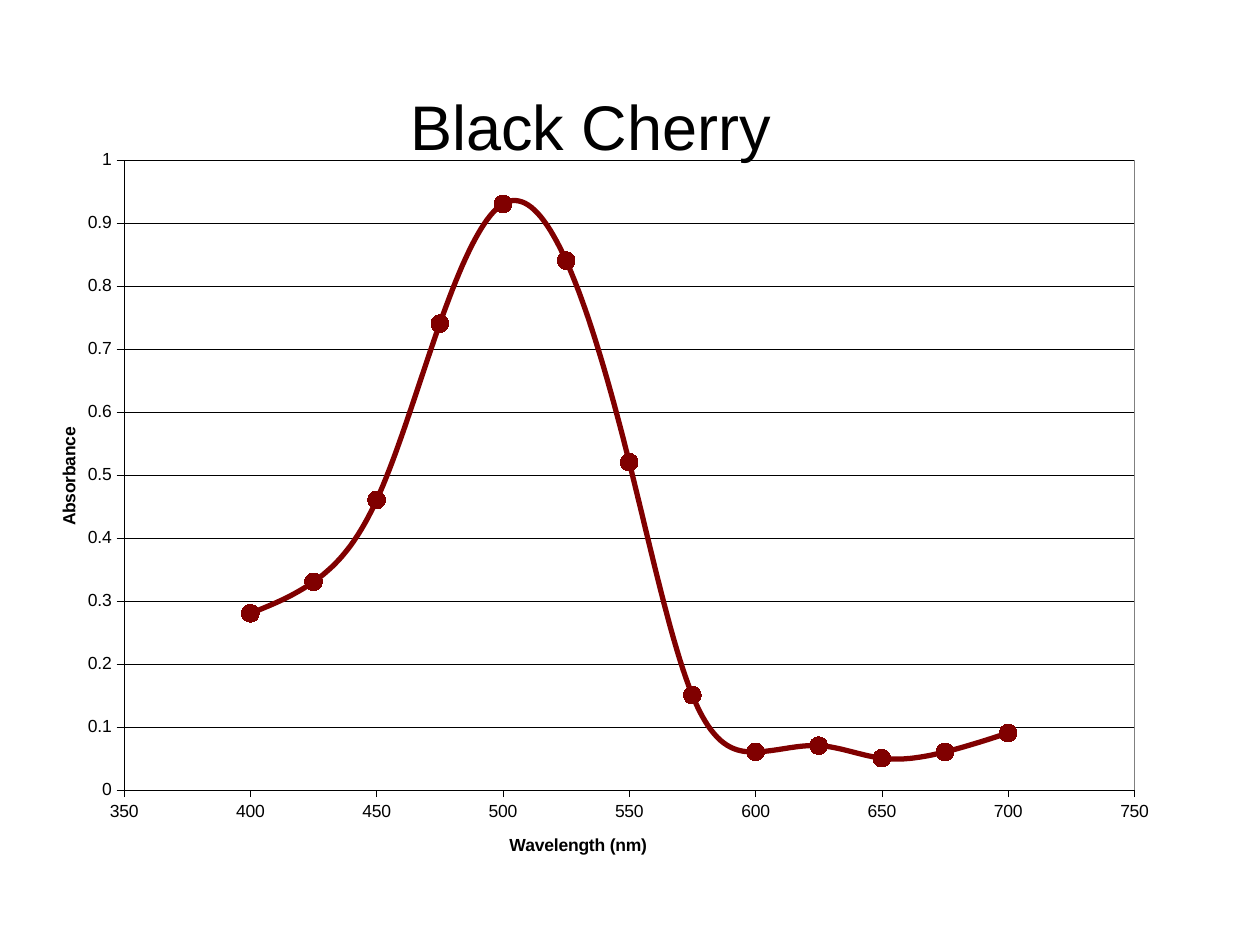
from dataclasses import dataclass

from pptx import Presentation
from pptx import util as u
from pptx.chart.data import XyChartData
from pptx.dml.color import RGBColor
from pptx.enum import chart as ch
from pptx.oxml import parse_xml
from pptx.oxml.ns import nsdecls, qn


@dataclass(frozen=True)
class Theme:
    font: str = "Arial"
    ink: RGBColor = RGBColor(0, 0, 0)
    cherry: RGBColor = RGBColor(0x80, 0, 0)
    frame: RGBColor = RGBColor(0x80, 0x80, 0x80)
    title: float = 36
    body: float = 10
    hair: float = 0.25
    curve: float = 3


def set_text(tf, value, font, size, color, bold=False):
    tf.text = value
    r = tf.paragraphs[0].runs[0]
    r.font.name, r.font.size, r.font.bold = font, u.Pt(size), bold
    r.font.color.rgb = color


def set_line(line, color, width):
    line.color.rgb = color
    line.width = u.Pt(width)


class Deck:
    """Holds the theme and the current slide, and adds chart elements to it."""

    def __init__(self, prs, theme):
        self.theme = theme
        self.s = prs.slides.add_slide(prs.slide_layouts[6])
        self.size = None

    def layout(self, el, *box):
        old = el.find(qn("c:layout"))
        if old is not None:
            el.remove(old)
        target = '<c:layoutTarget val="inner"/>' if len(box) == 4 else ""
        values = "".join(
            f'<c:{tag} val="{u.Pt(v) / full:.4f}"/>'
            for tag, v, full in zip("xywh", box, self.size * 2))
        el.insert(0 if el.find(qn("c:tx")) is None else 1, parse_xml(
            f'<c:layout {nsdecls("c")}><c:manualLayout>{target}<c:xMode val="edge"/>'
            f'<c:yMode val="edge"/>{values}</c:manualLayout></c:layout>'))

    def title(self, owner, value, x, y, size, bold=False, rot=0):
        t = self.theme
        tf = owner.text_frame
        set_text(tf, value, font=t.font, size=size, color=t.ink, bold=bold)
        tf._txBody.find(qn("a:bodyPr")).set("rot", str(rot * 60000))
        self.layout(owner._element, x, y)

    def axis(self, axis, low, high, step, grid):
        t = self.theme
        axis.minimum_scale, axis.maximum_scale, axis.major_unit = low, high, step
        axis.has_major_gridlines = grid
        axis.major_tick_mark = ch.XL_TICK_MARK.OUTSIDE
        axis.minor_tick_mark = ch.XL_TICK_MARK.NONE
        axis.tick_labels.number_format = "General"
        axis.tick_labels.number_format_is_linked = False
        set_line(axis.format.line, t.ink, t.hair)
        if grid:
            set_line(axis.major_gridlines.format.line, t.ink, t.hair)

    def scatter(self, name, points, left, top, width, height, plot):
        t = self.theme
        data = XyChartData()
        series = data.add_series(name)
        for x, y in points:
            series.add_data_point(x, y)
        self.size = (u.Pt(width), u.Pt(height))
        chart = self.s.shapes.add_chart(
            ch.XL_CHART_TYPE.XY_SCATTER_SMOOTH, u.Pt(left), u.Pt(top),
            *self.size, data).chart
        chart.has_legend = False
        chart.font.name, chart.font.size = t.font, u.Pt(t.body)
        chart.font.color.rgb = t.ink
        chart.plots[0].vary_by_categories = False
        ser = chart.plots[0].series[0]
        ser._element.find(qn("c:smooth")).set("val", "1")
        set_line(ser.format.line, t.cherry, t.curve)
        ser.marker.style = ch.XL_MARKER_STYLE.CIRCLE
        ser.marker.size = 10
        ser.marker.format.fill.solid()
        ser.marker.format.fill.fore_color.rgb = t.cherry
        set_line(ser.marker.format.line, t.cherry, t.hair)
        area = chart._chartSpace.chart.plotArea
        self.layout(area, *plot)
        area.append(parse_xml(
            f'<c:spPr {nsdecls("c", "a")}><a:noFill/><a:ln w="{u.Pt(t.hair)}">'
            f'<a:solidFill><a:srgbClr val="{t.frame}"/></a:solidFill></a:ln></c:spPr>'))
        return chart


def main():
    prs = Presentation()
    prs.slide_width, prs.slide_height = u.Pt(720), u.Pt(540)
    theme = Theme()
    deck = Deck(prs, theme)
    absorbance = [0.28, 0.33, 0.46, 0.74, 0.93, 0.84, 0.52,
                  0.15, 0.06, 0.07, 0.05, 0.06, 0.09]
    chart = deck.scatter("Black Cherry", zip(range(400, 701, 25), absorbance),
                         23, 39.6, 674, 460.8, plot=(47.9, 51.8, 577.4, 360))
    deck.axis(chart.category_axis, 350, 750, 50, grid=False)
    deck.axis(chart.value_axis, 0, 1, 0.1, grid=True)
    deck.title(chart.chart_title, "Black Cherry", 205, 3.2, theme.title)
    deck.title(chart.category_axis.axis_title, "Wavelength (nm)",
               266.2, 434.9, theme.body, bold=True)
    deck.title(chart.value_axis.axis_title, "Absorbance",
               8, 202.8, theme.body, bold=True, rot=-90)
    prs.save("out.pptx")


if __name__ == "__main__":
    main()
